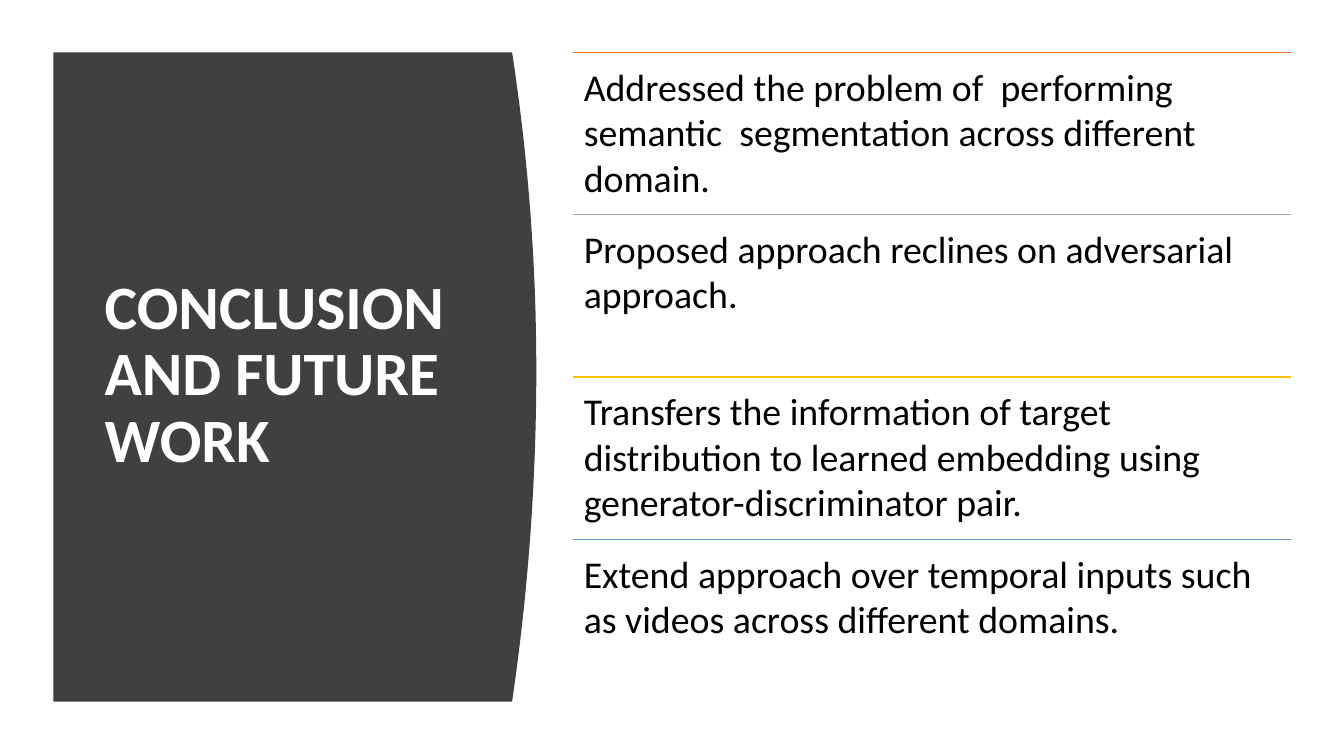
import lxml.etree
import pptx
import pptx.dml.color
import pptx.enum.shapes
import pptx.enum.text
import pptx.oxml.ns
import pptx.util

Inches = pptx.util.Inches
RGBColor = pptx.dml.color.RGBColor
Anchor = pptx.enum.text.MSO_ANCHOR

CHARCOAL = RGBColor(0x40, 0x40, 0x40)
WHITE = RGBColor(0xFF, 0xFF, 0xFF)
BLACK = RGBColor(0x00, 0x00, 0x00)
ORANGE = RGBColor(0xED, 0x7D, 0x31)
GRAY = RGBColor(0xA5, 0xA5, 0xA5)
GOLD = RGBColor(0xFF, 0xC0, 0x00)
BLUE = RGBColor(0x5B, 0x9B, 0xD5)

TOP, BOTTOM = 0.52, 6.96
PANEL_LEFT, PANEL_EDGE, PANEL_BULGE = 0.53, 5.08, 0.24
BULGE_Y = 3.67
CURVE_STEPS = 40
LIST_LEFT, LIST_WIDTH = 5.68, 7.12

CONCLUSIONS = [
    (ORANGE, "Addressed the problem of  performing semantic  segmentation across different domain."),
    (GRAY, "Proposed approach reclines on adversarial approach."),
    (GOLD, "Transfers the information of target distribution to learned embedding using "
           "generator-discriminator pair."),
    (BLUE, "Extend approach over temporal inputs such as videos across different domains."),
]


class SlideBuilder:
    font = "Calibri"

    def __init__(self, slide):
        self.slide = slide

    def text(self, content, left, top, width, height, *, size, color, bold=False,
             anchor=Anchor.TOP, inset_x=0.1, inset_y=0.05, line_spacing=1.0):
        frame = self.slide.shapes.add_textbox(
            Inches(left), Inches(top), Inches(width), Inches(height)).text_frame
        frame.word_wrap = True
        frame.vertical_anchor = anchor
        frame.margin_left = frame.margin_right = Inches(inset_x)
        frame.margin_top = frame.margin_bottom = Inches(inset_y)
        paragraph = frame.paragraphs[0]
        paragraph.line_spacing = line_spacing
        run = paragraph.add_run()
        run.text = content
        run.font.name = self.font
        run.font.size = pptx.util.Pt(size)
        run.font.bold = bold
        run.font.color.rgb = color

    def rule(self, left, top, width, color):
        divider = self.slide.shapes.add_connector(
            pptx.enum.shapes.MSO_CONNECTOR.STRAIGHT,
            Inches(left), Inches(top), Inches(left + width), Inches(top))
        divider.line.color.rgb = color
        divider.line.width = pptx.util.Pt(1)
        lxml.etree.SubElement(divider._element.spPr, pptx.oxml.ns.qn("a:effectLst"))

    def outline(self, points, color):
        corners = [(Inches(x), Inches(y)) for x, y in points]
        builder = self.slide.shapes.build_freeform(*corners[0])
        builder.add_line_segments(corners[1:], close=True)
        panel = builder.convert_to_shape()
        panel.shadow.inherit = False
        panel.fill.solid()
        panel.fill.fore_color.rgb = color
        panel.line.fill.background()


def panel_points():
    points = [(PANEL_LEFT, TOP)]
    for step in range(CURVE_STEPS + 1):
        y = TOP + (BOTTOM - TOP) * step / CURVE_STEPS
        reach = BULGE_Y - TOP if y < BULGE_Y else BOTTOM - BULGE_Y
        points.append((PANEL_EDGE + PANEL_BULGE * (1 - ((y - BULGE_Y) / reach) ** 2), y))
    return points + [(PANEL_LEFT, BOTTOM)]


def main():
    deck = pptx.Presentation()
    deck.slide_width, deck.slide_height = Inches(13.33), Inches(7.5)
    builder = SlideBuilder(deck.slides.add_slide(deck.slide_layouts[6]))

    builder.outline(panel_points(), CHARCOAL)
    builder.text("CONCLUSION AND FUTURE WORK", 0.94, 1.11, 3.74, 5.24, size=44,
                 color=WHITE, bold=True, anchor=Anchor.MIDDLE, line_spacing=0.9)

    row_height = (BOTTOM - TOP) / len(CONCLUSIONS)
    for row, (color, conclusion) in enumerate(CONCLUSIONS):
        top = TOP + row * row_height
        builder.rule(LIST_LEFT, top, LIST_WIDTH, color)
        builder.text(conclusion, LIST_LEFT, top, LIST_WIDTH, row_height, size=27,
                     color=BLACK, inset_x=0.11, inset_y=0.11)

    deck.save("out.pptx")


if __name__ == "__main__":
    main()
